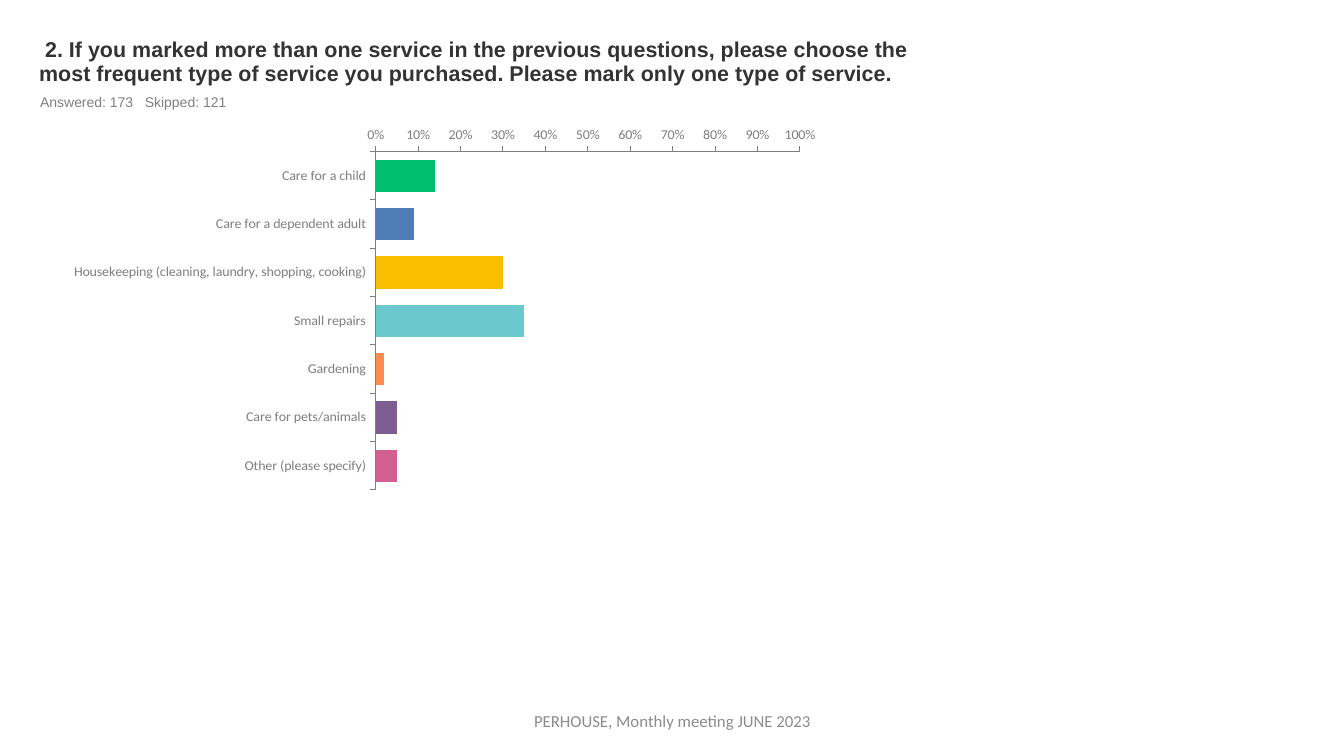
from lxml import etree
from pptx import Presentation
from pptx.chart.data import CategoryChartData
from pptx.dml.color import RGBColor
from pptx.enum.chart import XL_AXIS_CROSSES, XL_CHART_TYPE, XL_TICK_LABEL_POSITION, XL_TICK_MARK
from pptx.enum.text import MSO_ANCHOR, PP_ALIGN
from pptx.oxml.ns import qn
from pptx.util import Inches, Pt

COLORS = {"title": "333333", "counts": "808080", "footer": "8C8C8C", "axis": "7F7F7F"}

TITLE = (" 2.\u00a0If you marked more than one service in the previous questions, "
         "please choose the most frequent type of service you purchased. "
         "Please mark only one type of service.")
COUNTS = "Answered: 173   Skipped: 121"
FOOTER = "PERHOUSE, Monthly meeting JUNE 2023"

# service, share of answers, bar colour
SERVICES = [
    ("Care for a child", 0.14, "00BF6F"),
    ("Care for a dependent adult", 0.09, "507CB6"),
    ("Housekeeping (cleaning, laundry, shopping, cooking)", 0.30, "F9BE00"),
    ("Small repairs", 0.35, "6BC8CD"),
    ("Gardening", 0.02, "FF8B4F"),
    ("Care for pets/animals", 0.05, "7D5E90"),
    ("Other (please specify)", 0.05, "D25F90"),
]
CHART_AREA = (0.59, 1.26, 7.65, 3.9)
PLOT_LAYOUT = {"x": 0.41, "y": 0.02, "w": 0.55, "h": 0.9}  # fractions of the chart area


def add_text(page, text, area, font_name, size, color, anchor=MSO_ANCHOR.TOP):
    box = page.shapes.add_textbox(*map(Inches, area))
    frame = box.text_frame
    frame.word_wrap = True
    frame.vertical_anchor = anchor
    frame.text = text
    para = frame.paragraphs[0]
    font = para.runs[0].font
    font.name, font.size = font_name, Pt(size)
    font.color.rgb = RGBColor.from_string(color)
    return para


def style_axis(axis):
    axis.has_major_gridlines = False
    axis.major_tick_mark = XL_TICK_MARK.OUTSIDE
    axis.minor_tick_mark = XL_TICK_MARK.NONE
    axis.format.line.color.rgb = RGBColor.from_string(COLORS["axis"])
    axis.format.line.width = Pt(0.75)
    font = axis.tick_labels.font
    font.name, font.size = "Calibri", Pt(10)
    font.color.rgb = RGBColor.from_string(COLORS["axis"])


def fix_plot_layout(chart):
    """Pin the inner plot area so that the long labels stay on one line."""
    plot_area = chart._chartSpace.chart.plotArea
    layout = plot_area.find(qn("c:layout"))
    if layout is None:
        layout = etree.Element(qn("c:layout"))
        plot_area.insert(0, layout)
    manual = etree.SubElement(layout, qn("c:manualLayout"))
    settings = [("layoutTarget", "inner"), ("xMode", "edge"), ("yMode", "edge")]
    for tag, value in settings + list(PLOT_LAYOUT.items()):
        etree.SubElement(manual, qn(f"c:{tag}")).set("val", str(value))


def add_services_chart(page):
    names, shares, colors = zip(*SERVICES)
    data = CategoryChartData(number_format="0%")
    data.categories = names
    data.add_series("Series 1", shares)
    chart = page.shapes.add_chart(
        XL_CHART_TYPE.BAR_CLUSTERED, *map(Inches, CHART_AREA), data).chart
    chart.has_legend = False
    chart.has_title = False
    chart.font.name, chart.font.size = "Calibri", Pt(18)

    plot = chart.plots[0]
    plot.gap_width, plot.overlap = 50, 100
    plot.vary_by_categories = False
    series = plot.series[0]
    for index, color in enumerate(colors):
        fill = series.points[index].format.fill
        fill.solid()
        fill.fore_color.rgb = RGBColor.from_string(color)

    service_axis, share_axis = chart.category_axis, chart.value_axis
    style_axis(service_axis)
    service_axis.reverse_order = True
    service_axis.crosses = XL_AXIS_CROSSES.MAXIMUM
    service_axis.tick_label_position = XL_TICK_LABEL_POSITION.LOW
    style_axis(share_axis)
    share_axis.minimum_scale, share_axis.maximum_scale = 0, 1
    share_axis.major_unit = 0.1
    share_axis.tick_labels.number_format = "0%"
    share_axis.tick_labels.number_format_is_linked = False
    fix_plot_layout(chart)


def main():
    deck = Presentation()
    deck.slide_width, deck.slide_height = Inches(13.33), Inches(7.5)
    page = deck.slides.add_slide(deck.slide_layouts[6])

    footer = add_text(page, FOOTER, (4.42, 6.95, 4.5, 0.4), "Calibri", 12,
                      COLORS["footer"], MSO_ANCHOR.MIDDLE)
    footer.alignment = PP_ALIGN.CENTER
    title = add_text(page, TITLE, (0.29, 0.3, 9, 0.6), "Arial", 15.3,
                     COLORS["title"], MSO_ANCHOR.BOTTOM)
    title.line_spacing = 0.9
    title.runs[0].font.bold = True
    counts = add_text(page, COUNTS, (0.3, 0.9, 9, 0.26), "Arial", 10, COLORS["counts"])
    counts.line_spacing = 0.9
    counts.space_before = Pt(2)
    add_services_chart(page)
    deck.save("out.pptx")


if __name__ == "__main__":
    main()
